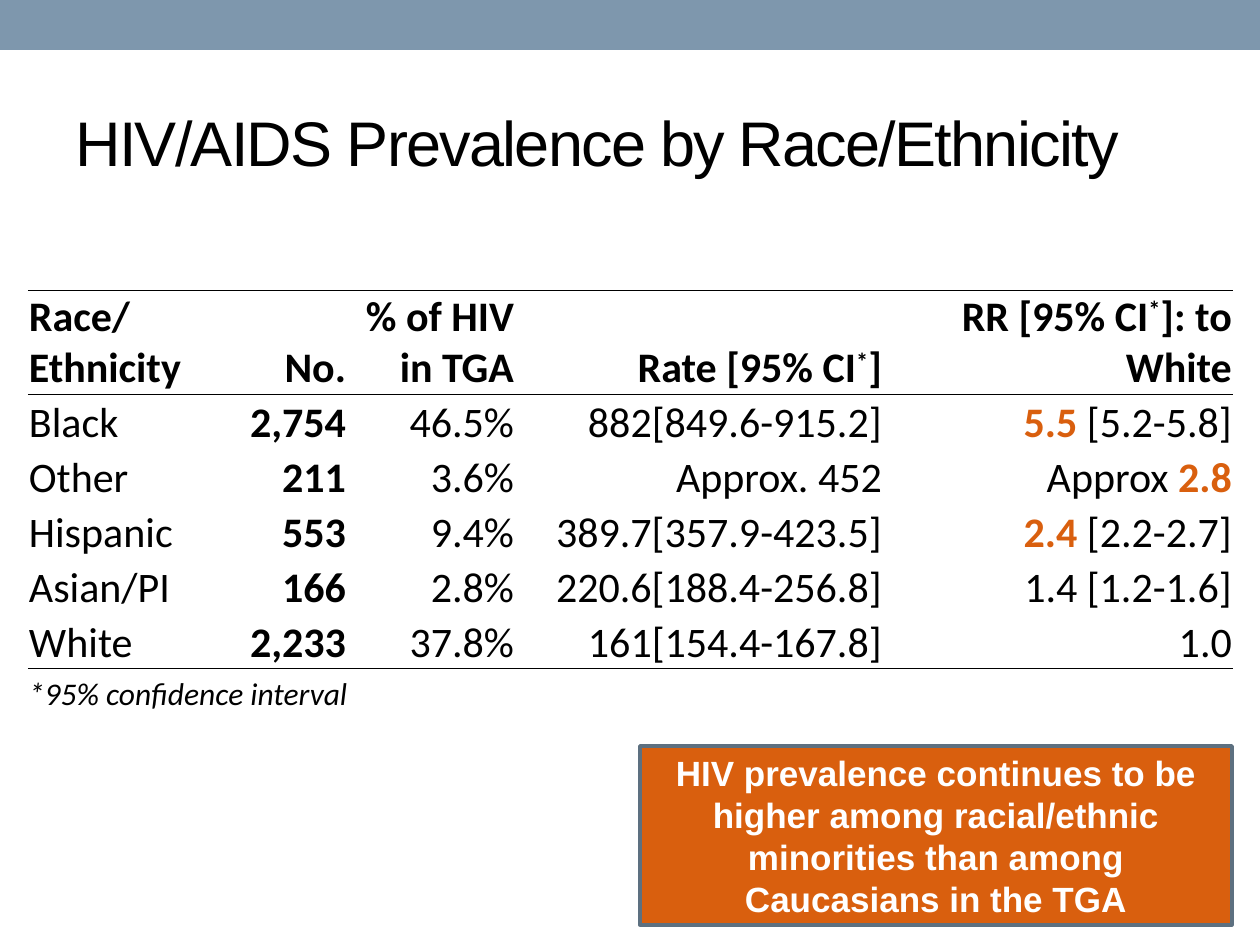
from lxml.etree import SubElement
from pptx import Presentation
from pptx.dml.color import RGBColor
from pptx.enum.shapes import MSO_SHAPE as SHAPE
from pptx.enum.text import MSO_ANCHOR as ANCHOR, PP_ALIGN as ALIGN
from pptx.oxml.ns import qn
from pptx.util import Emu, Pt

BLACK = RGBColor(0x00, 0x00, 0x00)
WHITE = RGBColor(0xFF, 0xFF, 0xFF)
BLUE = RGBColor(0x7E, 0x97, 0xAD)
SLATE = RGBColor(0x5D, 0x70, 0x80)
ORANGE = RGBColor(0xD9, 0x5F, 0x0E)

COLUMNS = [193, 126, 168, 368, 350]
ROWS = [104] + [55] * 5 + [45]
RULED_EDGES = (0, 1, 6)
HOT = {"bold": True, "color": ORANGE}
SUP = {"base": 30}

HEADER = ["Race/ Ethnicity", "No.", "% of HIV in TGA",
          [("Rate [95% CI", {}), ("*", SUP), ("]", {})],
          [("RR [95% CI", {}), ("*", SUP), ("]: to White", {})]]
BODY = [
    ["Black", "2,754", "46.5%", "882[849.6-915.2]", [("5.5", HOT), (" [5.2-5.8]", {})]],
    ["Other", "211", "3.6%", "Approx. 452", [("Approx ", {}), ("2.8", HOT)]],
    ["Hispanic", "553", "9.4%", "389.7[357.9-423.5]", [("2.4", HOT), (" [2.2-2.7]", {})]],
    ["Asian/PI", "166", "2.8%", "220.6[188.4-256.8]", "1.4 [1.2-1.6]"],
    ["White", "2,233", "37.8%", "161[154.4-167.8]", "1.0"],
]


def px(n):
    return Emu(round(n * 914400 / 126))


class Deck:
    heading_font = "Arial"
    table_font = "Calibri"

    def __init__(self):
        self.prs = Presentation()
        self.prs.slide_width, self.prs.slide_height = px(1260), px(945)
        self.s = self.prs.slides.add_slide(self.prs.slide_layouts[6])

    def rect(self, box, fill, line=None):
        sp = self.s.shapes.add_shape(SHAPE.RECTANGLE, *map(px, box))
        sp.shadow.inherit = False
        sp.fill.solid()
        sp.fill.fore_color.rgb = fill
        if line is None:
            sp.line.fill.background()
        else:
            sp.line.color.rgb = line
            sp.line.width = Pt(2.08)
        return sp

    def label(self, sp, text, size, color, bold=False, align=ALIGN.LEFT):
        tf = sp.text_frame
        tf.word_wrap = True
        tf.vertical_anchor = ANCHOR.MIDDLE
        p = tf.paragraphs[0]
        p.alignment = align
        r = p.add_run()
        r.text = text
        p.font.name, p.font.size, p.font.bold = self.heading_font, Pt(size), bold
        p.font.color.rgb = color
        return r

    def title(self, box, text):
        sp = self.s.shapes.add_textbox(*map(px, box))
        r = self.label(sp, text, 36, BLACK)
        r._r.get_or_add_rPr().set("spc", "-100")

    def callout(self, box, text):
        sp = self.rect(box, ORANGE, SLATE)
        self.label(sp, text, 20, WHITE, True, ALIGN.CENTER)

    def table(self, left, top, columns, rows):
        box = left, top, sum(columns), sum(rows)
        table = self.s.shapes.add_table(len(rows), len(columns), *map(px, box)).table
        table.first_row = table.horz_banding = False
        for column, width in zip(table.columns, columns):
            column.width = px(width)
        for i, height in enumerate(rows):
            table.rows[i].height = px(height)
            for j in range(len(columns)):
                self.style_cell(table.cell(i, j), i)
        return table

    def style_cell(self, cell, row):
        cell.margin_left = cell.margin_right = cell.margin_top = px(1)
        cell.margin_bottom = 0
        cell.vertical_anchor = ANCHOR.BOTTOM
        tc_pr = cell._tc.get_or_add_tcPr()
        ruled = {"lnT": row in RULED_EDGES, "lnB": row + 1 in RULED_EDGES}
        for tag in ("lnL", "lnR", "lnT", "lnB"):
            ln = SubElement(tc_pr, qn(f"a:{tag}"), w=str(Pt(0.5)))
            if ruled.get(tag):
                fill = SubElement(ln, qn("a:solidFill"))
                SubElement(fill, qn("a:srgbClr"), val=str(BLACK))
            else:
                SubElement(ln, qn("a:noFill"))
        cell.fill.background()

    def fill_cell(self, cell, content, size=24, bold=False, italic=False, align=ALIGN.RIGHT):
        p = cell.text_frame.paragraphs[0]
        p.alignment = align
        runs = [(content, {})] if isinstance(content, str) else content
        for text, style in runs:
            r = p.add_run()
            r.text = text
            r.font.name, r.font.size, r.font.italic = self.table_font, Pt(size), italic
            r.font.bold = style.get("bold", bold)
            r.font.color.rgb = style.get("color", BLACK)
            if "base" in style:
                r._r.get_or_add_rPr().set("baseline", str(style["base"] * 1000))


def main():
    deck = Deck()
    deck.rect((0, 0, 1260, 50), BLUE)
    deck.title((63, 73, 1134, 136), "HIV/AIDS Prevalence by Race/Ethnicity")
    deck.callout((640, 746, 592, 179),
                 "HIV prevalence continues to be higher among racial/ethnic "
                 "minorities than among Caucasians in the TGA")
    table = deck.table(28, 290, COLUMNS, ROWS)
    for i, row in enumerate([HEADER] + BODY):
        for j, content in enumerate(row):
            deck.fill_cell(table.cell(i, j), content, bold=i == 0 or j == 1,
                           align=ALIGN.RIGHT if j else ALIGN.LEFT)
    note = table.cell(6, 0)
    note.merge(table.cell(6, 4))
    deck.fill_cell(note, "*95% confidence interval", size=18, italic=True, align=ALIGN.LEFT)
    deck.prs.save("out.pptx")


if __name__ == "__main__":
    main()
